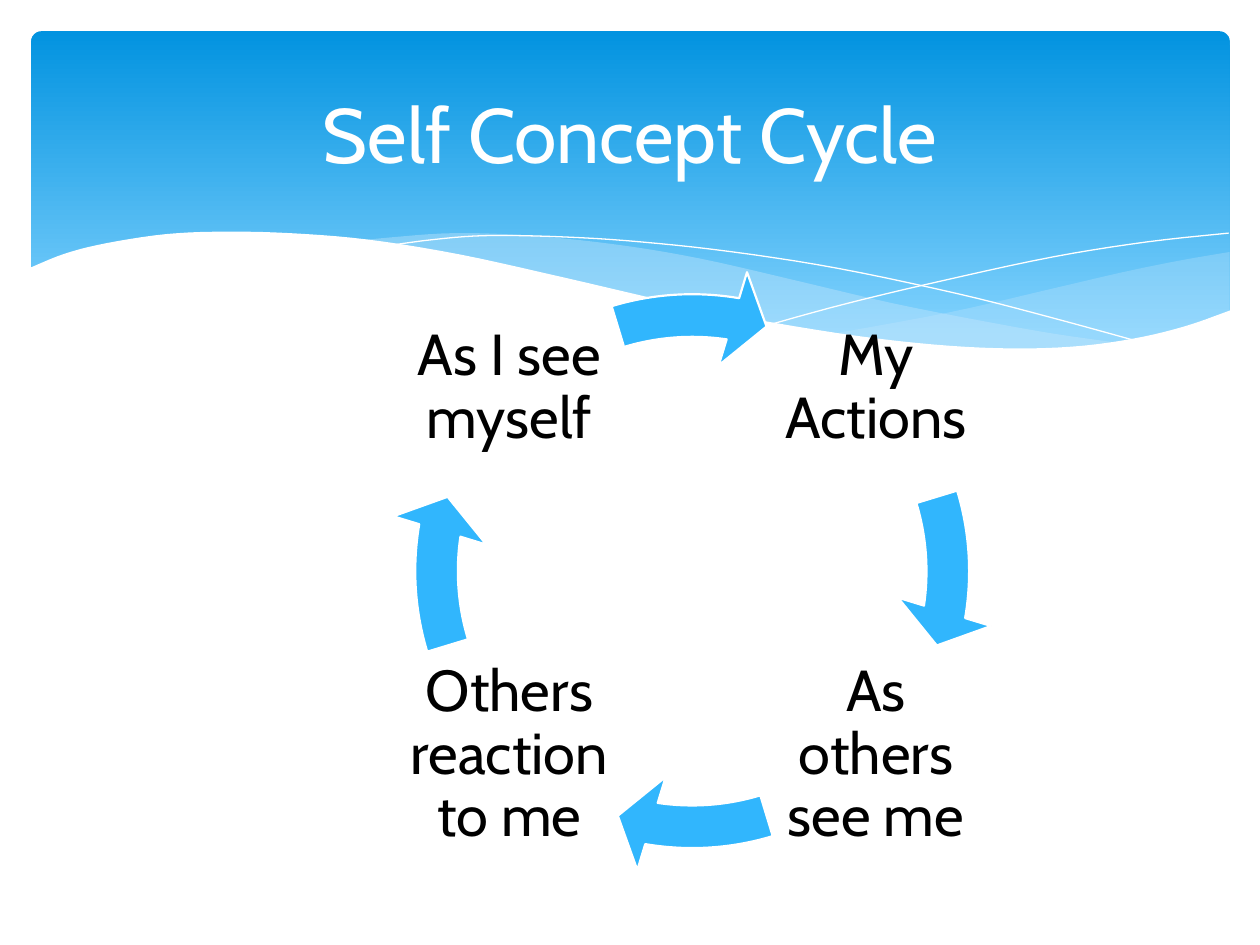
"""Build the Self Concept Cycle slide: a wavy banner above four linked steps."""
from dataclasses import dataclass

from pptx import Presentation
from pptx.dml.color import RGBColor
from pptx.enum.shapes import MSO_SHAPE
from pptx.enum.text import MSO_ANCHOR, PP_ALIGN
from pptx.oxml.ns import qn
from pptx.oxml.xmlchemy import OxmlElement
from pptx.shapes.autoshape import Shape
from pptx.shapes.shapetree import SlideShapes
from pptx.util import Cm, Pt

Point = tuple[float, float]


@dataclass(frozen=True)
class Theme:
    font: str = "Cabin"
    white: str = "FFFFFF"
    text: str = "000000"
    arrow: str = "31B6FD"
    banner_top: str = "0293E0"
    banner_bottom: str = "83D3FE"
    ribbon: str = "C6E7FC"
    title_size: float = 44
    step_size: float = 33
    arrow_line: float = 1.25
    hairline: float = 0


@dataclass(frozen=True)
class Wave:
    edges: tuple[tuple[Point, ...], ...]
    fill: str | None = None
    opacity: int = 100


@dataclass(frozen=True)
class Step:
    text: str
    left: float
    top: float


THEME = Theme()
LEFT, RIGHT, TOP, BOTTOM = 8.1, 15.49, 5.66, 13.06
STEP_SIDE = 4.34
RING = (7.82, 5.38, 12.27)

WAVES = (
    Wave((
        ((24.79, 5.08), (23.75, 5.26), (22.63, 5.49), (21.13, 5.84), (19.13, 6.3),
         (16.79, 6.73)),
        ((16.79, 6.73), (18.26, 6.91), (19.53, 7.04), (20.68, 7.06), (21.69, 7.01),
         (22.58, 6.91), (23.57, 6.68), (24.79, 6.27)),
    ), THEME.ribbon, 29),
    Wave((
        ((22.68, 6.93), (21.26, 6.73), (19.69, 6.45), (17.93, 6.1), (15.98, 5.64),
         (14.1, 5.21), (12.42, 4.93), (10.67, 4.75), (9.17, 4.7), (7.95, 4.78),
         (7.26, 4.85)),
        ((7.26, 4.85), (8.69, 5.05), (10.26, 5.36), (11.4, 5.64), (13.46, 6.1),
         (15.27, 6.48), (16.89, 6.76), (18.34, 6.96), (19.63, 7.04), (20.78, 7.06),
         (21.77, 7.04), (22.68, 6.93)),
    ), THEME.ribbon, 40),
    Wave((
        ((7.85, 4.95), (8.74, 4.83), (9.83, 4.75), (11.43, 4.78), (12.95, 4.88),
         (14.78, 5.08), (16.89, 5.41), (19.3, 5.92), (21.11, 6.38), (23.04, 6.91)),
    )),
    Wave((
        ((15.57, 6.53), (17.07, 6.12), (19, 5.66), (21.23, 5.18), (23.11, 4.88),
         (24.77, 4.7)),
    )),
    Wave((
        ((24.82, 6.25), (23.88, 6.58), (22.83, 6.83), (21.59, 6.99), (20.14, 7.02),
         (18.44, 6.91), (16.46, 6.65), (14.1, 6.22), (11.35, 5.59), (9.27, 5.13),
         (7.42, 4.83), (5.84, 4.7), (4.5, 4.67), (3.35, 4.72), (2.16, 4.9),
         (1.32, 5.11), (0.58, 5.41)),
        ((0.58, 8.36), (24.82, 8.36)),
    ), THEME.white),
)

STEPS = (
    Step("My Actions", RIGHT, TOP),
    Step("As others see me", RIGHT, BOTTOM),
    Step("Others reaction to me", LEFT, BOTTOM),
    Step("As I see myself", LEFT, TOP),
)


def smooth(pts: tuple[Point, ...], parts: int = 5) -> list[Point]:
    """Return points along a Catmull-Rom curve through the given ones."""
    ext = (pts[0], *pts, pts[-1])
    curve = [pts[0]]
    for a, b, c, d in zip(ext, ext[1:], ext[2:], ext[3:]):
        for i in range(1, parts + 1):
            t = i / parts
            x, y = (
                (2 * q + (s - p) * t + (2 * p - 5 * q + 4 * s - u) * t**2
                 + (3 * q - p - 3 * s + u) * t**3) / 2
                for p, q, s, u in zip(a, b, c, d)
            )
            curve.append((x, y))
    return curve


def add_wave(shapes: SlideShapes, wave: Wave) -> None:
    """Draw a filled ribbon, or a white hairline when there is no fill."""
    pts = [(Cm(x), Cm(y)) for edge in wave.edges for x, y in smooth(edge)]
    fb = shapes.build_freeform(*pts[0])
    fb.add_line_segments(pts[1:], close=wave.fill is not None)
    sp = fb.convert_to_shape()
    sp.shadow.inherit = False
    if wave.fill is None:
        sp.fill.background()
        sp.line.color.rgb = RGBColor.from_string(THEME.white)
        sp.line.width = Pt(THEME.hairline)
        return
    sp.fill.solid()
    sp.fill.fore_color.rgb = RGBColor.from_string(wave.fill)
    if wave.opacity < 100:
        alpha = OxmlElement("a:alpha")
        alpha.set("val", str(wave.opacity * 1000))
        next(sp.element.iter(qn("a:srgbClr"))).append(alpha)
    sp.line.fill.background()


def add_banner(shapes: SlideShapes) -> None:
    """Draw the rounded gradient banner."""
    sp = shapes.add_shape(MSO_SHAPE.ROUNDED_RECTANGLE,
                          Cm(0.63), Cm(0.63), Cm(24.16), Cm(6.86))
    sp.adjustments[0] = 0.03
    sp.shadow.inherit = False
    sp.line.fill.background()
    sp.fill.gradient()
    sp.fill.gradient_angle = 270
    stops = ((0, THEME.banner_top), (0.9, THEME.banner_bottom))
    for stop, (position, color) in zip(sp.fill.gradient_stops, stops):
        stop.position = position
        stop.color.rgb = RGBColor.from_string(color)


def add_text(shapes: SlideShapes, text: str, box: tuple[float, ...],
             size: float, color: str) -> Shape:
    """Add a centred text box and return it."""
    sp = shapes.add_textbox(*map(Cm, box))
    tf = sp.text_frame
    tf.word_wrap = True
    tf.vertical_anchor = MSO_ANCHOR.MIDDLE
    p = tf.paragraphs[0]
    p.alignment = PP_ALIGN.CENTER
    r = p.add_run()
    r.text = text
    r.font.name = THEME.font
    r.font.size = Pt(size)
    r.font.color.rgb = RGBColor.from_string(color)
    return sp


def add_step(shapes: SlideShapes, step: Step) -> None:
    """Add the label of one step of the cycle."""
    box = (step.left, step.top, STEP_SIDE, STEP_SIDE)
    tf = add_text(shapes, step.text, box, THEME.step_size, THEME.text).text_frame
    tf.margin_left = tf.margin_right = tf.margin_top = tf.margin_bottom = Cm(0.12)
    tf.paragraphs[0].line_spacing = 0.9


def add_arrow(shapes: SlideShapes, turn: int) -> None:
    """Draw the ring arrow that lies the given number of quarter turns on."""
    left, top, side = map(Cm, RING)
    sp = shapes.add_shape(MSO_SHAPE.CIRCULAR_ARROW, left, top, side, side)
    start, end = (343.09 + 90 * turn) % 360, 9.16 + 90 * turn
    values = (0.07, 7.75 * 0.6, end * 0.6, start * 0.6, 0.08)
    for i, value in enumerate(values):
        sp.adjustments[i] = value
    sp.shadow.inherit = False
    sp.fill.solid()
    sp.fill.fore_color.rgb = RGBColor.from_string(THEME.arrow)
    sp.line.color.rgb = RGBColor.from_string(THEME.white)
    sp.line.width = Pt(THEME.arrow_line)


def main() -> None:
    """Build and save the slide."""
    prs = Presentation()
    prs.slide_width, prs.slide_height = Cm(25.4), Cm(19.05)
    shapes = prs.slides.add_slide(prs.slide_layouts[6]).shapes
    add_banner(shapes)
    for wave in WAVES:
        add_wave(shapes, wave)
    add_text(shapes, "Self Concept Cycle", (1.27, 0.94, 22.86, 3.48),
             THEME.title_size, THEME.white)
    for turn, step in enumerate(STEPS):
        add_step(shapes, step)
        add_arrow(shapes, turn)
    prs.save("out.pptx")


if __name__ == "__main__":
    main()
